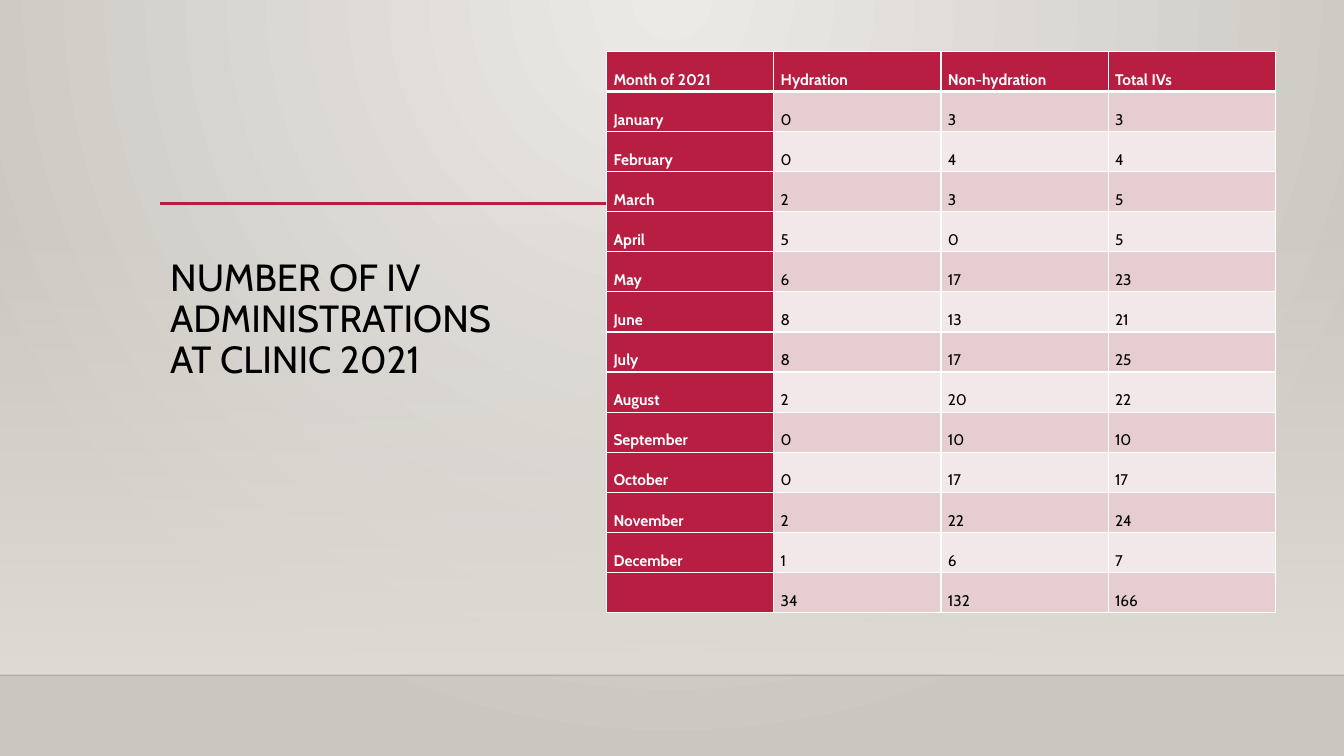
import pptx
import pptx.dml.color
import pptx.enum.shapes
import pptx.enum.text
import pptx.oxml
import pptx.oxml.ns
import pptx.util
from lxml import etree

Pt = pptx.util.Pt

# Content
TITLE = "NUMBER OF IV ADMINISTRATIONS AT CLINIC 2021"
ROWS = [
    ("Month of 2021", "Hydration", "Non-hydration", "Total IVs"),
    ("January", 0, 3, 3),
    ("February", 0, 4, 4),
    ("March", 2, 3, 5),
    ("April", 5, 0, 5),
    ("May", 6, 17, 23),
    ("June", 8, 13, 21),
    ("July", 8, 17, 25),
    ("August", 2, 20, 22),
    ("September", 0, 10, 10),
    ("October", 0, 17, 17),
    ("November", 2, 22, 24),
    ("December", 1, 6, 7),
    ("", 34, 132, 166),
]

THEME = {
    "font": "Cabin", "title_size": 27, "table_size": 11,
    "text": "000000", "light": "FFFFFF", "accent": "B71E42",
    "bands": ("E6CDCF", "F3E8E9"), "edge": "000001",
    "glow": "ECEAE7", "backdrop": "CAC7C1", "wall": "DFDBD5",
}

# Layout, in points
WIDTH, HEIGHT = 960, 540
WALL_TOP, FLOOR_TOP = 159, 482.4
MARGIN, RULE_TOP, RULE_RIGHT = 114.5, 145.5, 871.2
TITLE_BOX = (MARGIN, 181.4, 257.8, 210.2)
TABLE_LEFT, TABLE_TOP = 433.4, 36.7
COLUMN_WIDTH, ROW_HEIGHT = 119.4, 28.65
CELL_INSET = 4.9
PLAIN_TABLE_STYLE = "{2D5ABB26-0587-4C30-8999-92F81FD0307C}"


def rgb(name):
    return pptx.dml.color.RGBColor.from_string(name)


def gradient(stops, direction):
    """Build a gradient from (position, colour, opacity) percentages."""
    stop_xml = "".join(
        f'<a:gs pos="{position * 1000}"><a:srgbClr val="{color}">'
        f'<a:alpha val="{opacity * 1000}"/></a:srgbClr></a:gs>'
        for position, color, opacity in stops)
    return pptx.oxml.parse_xml(
        f'<a:gradFill {pptx.oxml.ns.nsdecls("a")} rotWithShape="1">'
        f"<a:gsLst>{stop_xml}</a:gsLst>{direction}</a:gradFill>")


def replace_gradient(parent, new_fill):
    old_fill = parent.find(pptx.oxml.ns.qn("a:gradFill"))
    parent.replace(old_fill, new_fill)


def style_font(paragraph, size, color, bold=False):
    font = paragraph.font
    font.name, font.size, font.bold = THEME["font"], Pt(size), bold
    font.color.rgb = rgb(color)


def add_line(slide, left, right, top, color, width):
    line = slide.shapes.add_connector(
        pptx.enum.shapes.MSO_CONNECTOR.STRAIGHT, Pt(left), Pt(top), Pt(right), Pt(top))
    line.line.color.rgb = rgb(color)
    line.line.width = Pt(width)
    etree.SubElement(line._element.spPr, pptx.oxml.ns.qn("a:effectLst"))
    return line


def set_borders(cell, widths):
    properties = cell._tc.get_or_add_tcPr()
    for index, (side, width) in enumerate(widths.items()):
        properties.insert(index, pptx.oxml.parse_xml(
            f'<a:{side} {pptx.oxml.ns.nsdecls("a")} w="{Pt(width)}"><a:solidFill>'
            f'<a:srgbClr val="{THEME["light"]}"/></a:solidFill></a:{side}>'))


def add_backdrop(slide):
    fill = slide.background.fill
    fill.gradient()
    replace_gradient(
        slide.background._cSld.bg.bgPr,
        gradient([(0, THEME["glow"], 100), (100, THEME["backdrop"], 100)],
                 '<a:path path="circle">'
                 '<a:fillToRect l="43000" t="0" r="43000" b="100000"/></a:path>'))

    wall = slide.shapes.add_shape(
        pptx.enum.shapes.MSO_SHAPE.RECTANGLE,
        0, Pt(WALL_TOP), Pt(WIDTH), Pt(FLOOR_TOP - WALL_TOP))
    wall.shadow.inherit = False
    wall.line.fill.background()
    wall.fill.gradient()
    replace_gradient(
        wall._element.spPr,
        gradient([(0, THEME["wall"], 0), (100, THEME["wall"], 100)],
                 '<a:lin ang="5400000" scaled="0"/>'))

    floor_edge = add_line(slide, 0, WIDTH, FLOOR_TOP, THEME["edge"], 1)
    color = next(floor_edge._element.spPr.iter(pptx.oxml.ns.qn("a:srgbClr")))
    etree.SubElement(color, pptx.oxml.ns.qn("a:alpha"), val="20000")
    add_line(slide, MARGIN, RULE_RIGHT, RULE_TOP, THEME["accent"], 2.5)


def add_title(slide):
    frame = slide.shapes.add_textbox(*map(Pt, TITLE_BOX)).text_frame
    frame.word_wrap = True
    paragraph = frame.paragraphs[0]
    paragraph.text = TITLE
    paragraph.line_spacing = 0.9
    style_font(paragraph, THEME["title_size"], THEME["text"])


def add_iv_table(slide):
    row_count, column_count = len(ROWS), len(ROWS[0])
    table = slide.shapes.add_table(
        row_count, column_count, Pt(TABLE_LEFT), Pt(TABLE_TOP),
        Pt(COLUMN_WIDTH * column_count), Pt(ROW_HEIGHT * row_count)).table
    table.first_row = table.horz_banding = False
    table._tbl.tblPr.find(pptx.oxml.ns.qn("a:tableStyleId")).text = PLAIN_TABLE_STYLE
    for column in table.columns:
        column.width = Pt(COLUMN_WIDTH)

    for row_index, values in enumerate(ROWS):
        table.rows[row_index].height = Pt(ROW_HEIGHT)
        for column_index, value in enumerate(values):
            cell = table.cell(row_index, column_index)
            heading = row_index == 0 or column_index == 0
            cell.margin_left = cell.margin_right = Pt(CELL_INSET)
            cell.margin_top = cell.margin_bottom = 0
            cell.vertical_anchor = pptx.enum.text.MSO_ANCHOR.TOP
            cell.fill.solid()
            cell.fill.fore_color.rgb = rgb(
                THEME["accent"] if heading else THEME["bands"][(row_index - 1) % 2])
            set_borders(cell, {"lnL": 1, "lnR": 1,
                               "lnT": 3 if row_index == 1 else 1,
                               "lnB": 3 if row_index == 0 else 1})
            paragraph = cell.text_frame.paragraphs[0]
            if value != "":
                paragraph.text = str(value)
                paragraph.line_spacing = 2.0
            style_font(paragraph, THEME["table_size"],
                       THEME["light"] if heading else THEME["text"], heading)


def main():
    presentation = pptx.Presentation()
    presentation.slide_width, presentation.slide_height = Pt(WIDTH), Pt(HEIGHT)
    slide = presentation.slides.add_slide(presentation.slide_layouts[6])
    add_backdrop(slide)
    add_title(slide)
    add_iv_table(slide)
    presentation.save("out.pptx")


if __name__ == "__main__":
    main()
